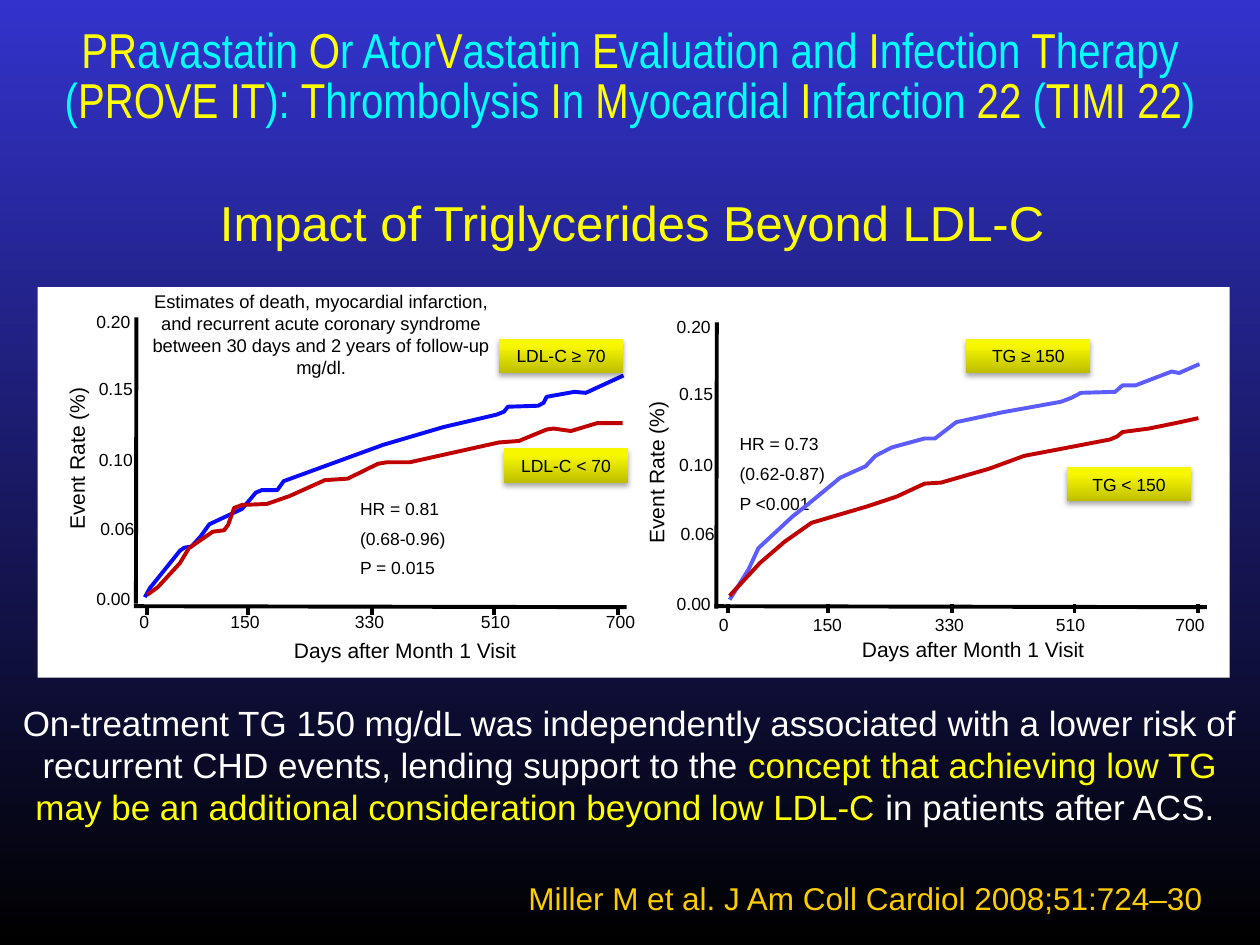
from lxml import etree
from pptx import Presentation
from pptx.dml.color import RGBColor
from pptx.enum.shapes import MSO_CONNECTOR, MSO_SHAPE
from pptx.enum.text import MSO_ANCHOR, PP_ALIGN
from pptx.oxml.ns import qn
from pptx.util import Cm, Pt

LEFT, CENTER, RIGHT = PP_ALIGN.LEFT, PP_ALIGN.CENTER, PP_ALIGN.RIGHT
TOP, MIDDLE = MSO_ANCHOR.TOP, MSO_ANCHOR.MIDDLE
RECTANGLE, STRAIGHT = MSO_SHAPE.RECTANGLE, MSO_CONNECTOR.STRAIGHT

COLORS = {name: RGBColor.from_string(value) for name, value in {
    "black": "000000", "white": "FFFFFF", "yellow": "FFFF00", "cyan": "00FFFF",
    "amber": "FFCC00", "royal": "3333CC", "blue": "0A0AFF", "periwinkle": "5C5CFF",
    "red": "C00000", "olive": "BEBE00", "lemon": "F7F700",
}.items()}

deck = Presentation()
deck.slide_width, deck.slide_height = Cm(25.4), Cm(19.05)
page = deck.slides.add_slide(deck.slide_layouts[6])
shapes = page.shapes


def add_text(text, left, top, width, height, size, colors=("black",),
             align=CENTER, font="Arial", box=None):
    """Fill a box; lines split paragraphs and bars switch to the next colour."""
    box = box or shapes.add_textbox(Cm(left), Cm(top), Cm(width), Cm(height))
    frame = box.text_frame
    frame.word_wrap = True
    for index, line in enumerate(text.split("\n")):
        para = frame.add_paragraph() if index else frame.paragraphs[0]
        para.alignment = align
        para.font.size, para.font.name = Pt(size), font
        if index:
            para.space_before = Pt(size / 2)
        for number, part in enumerate(line.split("|")):
            span = para.add_run()
            span.text = part
            span.font.color.rgb = COLORS[colors[number % len(colors)]]
    return box


def add_line(x1, y1, x2, y2):
    line = shapes.add_connector(STRAIGHT, Cm(x1), Cm(y1), Cm(x2), Cm(y2))
    line.line.color.rgb = COLORS["black"]
    line.line.width = Pt(2.25)
    etree.SubElement(line._element.spPr, qn("a:effectLst"))


# Background gradient
fill = page.background.fill
fill.gradient()
fill.gradient_angle = 270
for stop, name in zip(fill.gradient_stops, ("royal", "black")):
    stop.color.rgb = COLORS[name]

# Headings
title = add_text(
    "PR|avastatin |O|r Ator|V|astatin |E|valuation and |I|nfection |T|herapy (|"
    "PROVE IT|): |T|hrombolysis |I|n |M|yocardial |I|nfarction |22| (|TIMI 22|)",
    0, 0, 25.4, 3.18, 28, ("yellow", "cyan"), font="Arial Narrow")
title.text_frame.vertical_anchor = MIDDLE
title.text_frame.paragraphs[0].line_spacing = 0.85
add_text("Impact of Triglycerides Beyond LDL-C", 3, 3.76, 19.48, 1.45, 28, ("yellow",))

# White plotting area
panel = shapes.add_shape(RECTANGLE, Cm(0.76), Cm(5.79), Cm(24.03), Cm(7.87))
panel.shadow.inherit = False
panel.fill.solid()
panel.fill.fore_color.rgb = COLORS["white"]
panel.line.fill.background()

# Both plots: axes, ticks and labels; the right one is shifted from the left
TICKS = (2.97, 5, 7.49, 9.96, 12.45)
DAYS = ("0", "150", "330", "510", "700")
RATES = (("0.00", 1.65, 11.73), ("0.06", 1.73, 10.31), ("0.10", 1.7, 8.92),
         ("0.15", 1.7, 7.49), ("0.20", 1.65, 6.15))
PLOTS = (
    {"shift": 0, "drop": 0, "day_top": 12.2, "tick_top": 12.21,
     "day_centers": (2.91, 4.94, 7.45, 9.99, 12.51),
     "days_title": (4.88, 12.73), "rate_title": (-0.71, 8.86),
     "result": ("HR = 0.81\n(0.68-0.96)\nP = 0.015", 7.01, 9.91)},
    {"shift": 11.7, "drop": 0.1, "day_top": 12.25, "tick_top": 12.18,
     "day_centers": (14.59, 16.68, 19.14, 21.58, 23.99),
     "days_title": (16.33, 12.7), "rate_title": (10.97, 9.14),
     "result": ("HR = 0.73\n(0.62-0.87)\nP <0.001", 14.66, 8.61)},
)
for plot in PLOTS:
    shift, drop = plot["shift"], plot["drop"]
    add_line(2.75 + shift, 6.4 + drop, 2.74 + shift, 12.17 + drop)
    add_line(2.7 + shift, 12.22, 12.63 + shift, 12.24)
    for tick, center, day in zip(TICKS, plot["day_centers"], DAYS):
        add_line(tick + shift, plot["tick_top"], tick + shift, plot["tick_top"] + 0.18)
        add_text(day, center - 0.65, plot["day_top"], 1.3, 0.68, 10)
    for rate, left, top in RATES:
        add_text(rate, left + shift, top + drop, 1.27, 0.68, 10)
    add_text("Days after Month 1 Visit", *plot["days_title"], 6.58, 0.77, 12)
    add_text("Event Rate (%)", *plot["rate_title"], 4.52, 0.77, 12).rotation = 270
    add_text(*plot["result"], 2.87, 1.96, 10, align=LEFT)

# Event curves, points in hundredths of a centimetre
CURVES = (
    ("blue", ((292, 1204), (302, 1186), (363, 1110), (372, 1104), (386, 1102),
              (404, 1082), (422, 1057), (488, 1026), (516, 993), (528, 988),
              (559, 988), (572, 970), (772, 897), (894, 861), (1001, 836),
              (1016, 830), (1024, 820), (1085, 818), (1096, 812), (1102, 800),
              (1158, 790), (1181, 792), (1257, 757))),
    ("red", ((297, 1199), (318, 1184), (363, 1135), (381, 1105), (429, 1072),
             (452, 1069), (460, 1058), (472, 1024), (488, 1018), (538, 1016),
             (584, 1000), (655, 968), (701, 965), (762, 935), (780, 932),
             (826, 932), (1006, 892), (1046, 889), (1102, 866), (1116, 864),
             (1151, 869), (1204, 853), (1255, 853))),
    ("periwinkle", ((1471, 1209), (1509, 1148), (1529, 1105), (1598, 1041),
                    (1626, 1019), (1694, 963), (1745, 940), (1765, 919),
                    (1798, 902), (1864, 884), (1885, 884), (1928, 851),
                    (2022, 831), (2139, 810), (2160, 802), (2179, 792),
                    (2248, 790), (2263, 777), (2289, 777), (2362, 749),
                    (2377, 752), (2418, 734))),
    ("red", ((1471, 1201), (1532, 1135), (1582, 1092), (1636, 1054), (1748, 1021),
             (1808, 1001), (1864, 975), (1897, 973), (1994, 945), (2065, 919),
             (2144, 904), (2238, 886), (2252, 880), (2263, 871), (2316, 864),
             (2370, 853), (2416, 843))),
)
for name, points in CURVES:
    builder = shapes.build_freeform(*points[0], scale=Cm(0.01))
    builder.add_line_segments(points[1:], close=False)
    curve = builder.convert_to_shape()
    curve.shadow.inherit = False
    curve.fill.background()
    curve.line.color.rgb = COLORS[name]
    curve.line.width = Pt(2.25)

# Curve tags with a soft shadow below
TAGS = (("LDL-C ≥ 70", 10.06, 6.83), ("LDL-C < 70", 10.16, 9.04),
        ("TG ≥ 150", 19.48, 6.83), ("TG < 150", 21.51, 9.42))
for text, left, top in TAGS:
    tag = shapes.add_shape(RECTANGLE, Cm(left), Cm(top), Cm(2.5), Cm(0.69))
    tag.line.fill.background()
    tag.fill.gradient()
    tag.fill.gradient_angle = 90
    for stop, name, position in zip(tag.fill.gradient_stops, ("olive", "lemon"), (0, 0.8)):
        stop.color.rgb = COLORS[name]
        stop.position = position
    tag.shadow.inherit = False
    effects = tag._element.spPr.find(qn("a:effectLst"))
    shadow = etree.SubElement(effects, qn("a:outerShdw"), blurRad=str(Pt(3.1)),
                              dist=str(Pt(1.8)), dir="5400000", rotWithShape="0")
    shade = etree.SubElement(shadow, qn("a:srgbClr"), val=str(COLORS["black"]))
    etree.SubElement(shade, qn("a:alpha"), val="35000")
    add_text(text, left, top, 2.5, 0.69, 10, box=tag)

# Note over the left plot
add_text("Estimates of death, myocardial infarction, and recurrent acute coronary "
         "syndrome between 30 days and 2 years of follow-up mg/dl.",
         2.79, 5.72, 7.37, 2.72, 10.5)

# Conclusion and citation
add_text("On-treatment TG 150 mg/dL was independently associated with a lower risk of "
         "recurrent CHD events, lending support to the |concept that achieving low TG "
         "may be an additional consideration beyond low LDL-C |in patients after ACS. ",
         0, 14.02, 25.4, 2.82, 20, ("white", "yellow"))
add_text("Miller M et al. J Am Coll Cardiol 2008;51:724–30",
         8.79, 17.6, 15.7, 1.02, 18, ("amber",), RIGHT)

deck.save("out.pptx")
